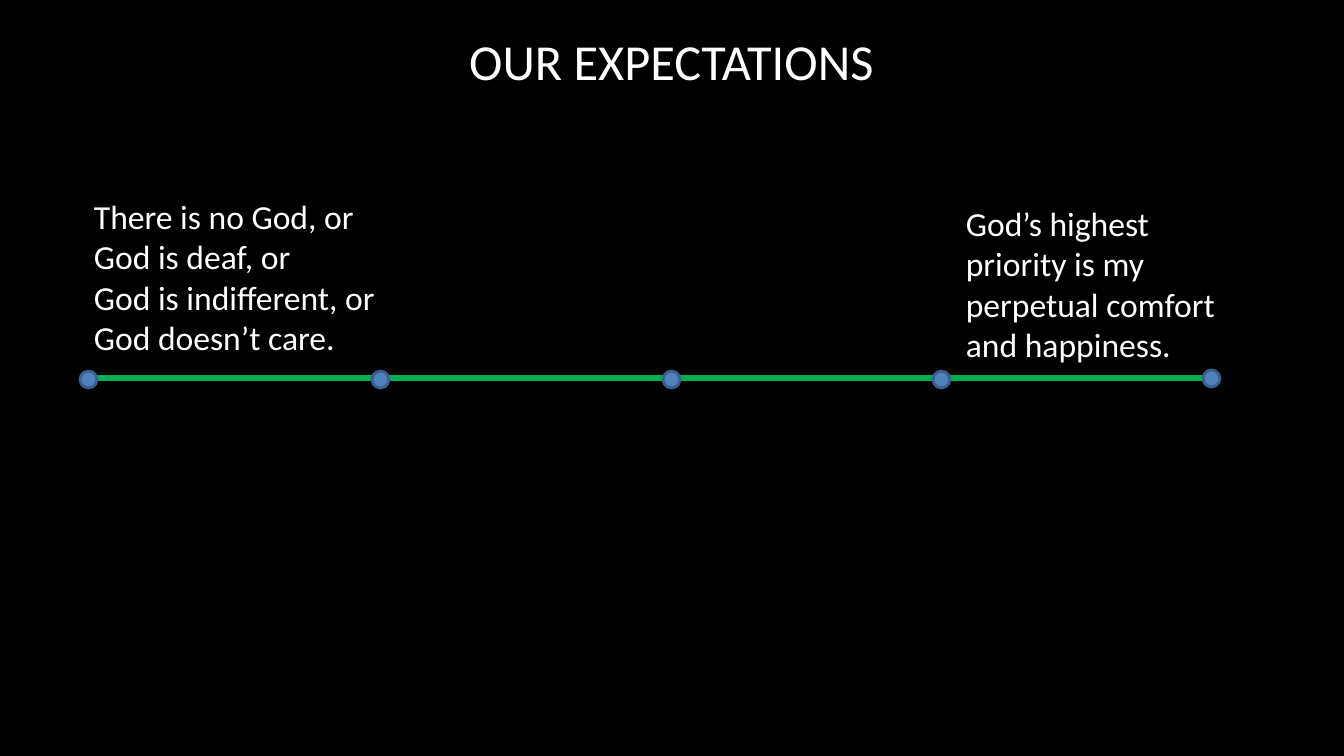
from dataclasses import dataclass

from lxml.etree import SubElement
from pptx import Presentation
from pptx.dml.color import RGBColor
from pptx.enum.shapes import MSO_CONNECTOR, MSO_SHAPE
from pptx.enum.text import MSO_AUTO_SIZE, PP_ALIGN
from pptx.oxml.ns import qn
from pptx.slide import Slide
from pptx.util import Emu, Pt

FONT = "Calibri"
BLACK, WHITE = "000000", "FFFFFF"
GREEN, BLUE, DARK_BLUE = "00B050", "4F81BD", "3A5F8C"
DOT_SIZE = 17


@dataclass
class TextBlock:
    left: int
    top: int
    width: int
    height: int
    lines: list[str]
    size: int = 24
    align: PP_ALIGN = PP_ALIGN.LEFT
    wrap: bool = True
    grow: bool = True


@dataclass
class Dot:
    left: int
    top: int = 371


TEXTS = [
    TextBlock(22, 25, 1299, 688, ["OUR EXPECTATIONS"], 36, PP_ALIGN.CENTER, grow=False),
    TextBlock(956, 198, 304, 173,
              ["God’s highest priority is my perpetual comfort and happiness."]),
    TextBlock(84, 191, 304, 173,
              ["There is no God, or", "God is deaf, or",
               "God is indifferent, or", "God doesn’t care."], wrap=False),
]
DOTS = [Dot(80), Dot(372), Dot(663), Dot(933), Dot(1203, 370)]


def px(n: int) -> Emu:
    return Emu(round(n * 914400 / 100.8))


def color(value: str) -> RGBColor:
    return RGBColor.from_string(value)


def add_text(slide: Slide, block: TextBlock) -> None:
    box = slide.shapes.add_textbox(px(block.left), px(block.top),
                                   px(block.width), px(block.height))
    tf = box.text_frame
    tf.word_wrap = block.wrap
    tf.auto_size = MSO_AUTO_SIZE.SHAPE_TO_FIT_TEXT if block.grow else MSO_AUTO_SIZE.NONE
    tf.text = "\n".join(block.lines)
    for p in tf.paragraphs:
        p.alignment = block.align
        p.font.name = FONT
        p.font.size = Pt(block.size)
        p.font.color.rgb = color(WHITE)


def add_scale_line(slide: Slide) -> None:
    line = slide.shapes.add_connector(MSO_CONNECTOR.STRAIGHT,
                                      px(88), px(378), px(1213), px(378))
    line.line.color.rgb = color(GREEN)
    line.line.width = Pt(5)
    SubElement(line._element.spPr, qn("a:effectLst"))


def add_dot(slide: Slide, dot: Dot) -> None:
    sp = slide.shapes.add_shape(MSO_SHAPE.OVAL, px(dot.left), px(dot.top),
                                px(DOT_SIZE), px(DOT_SIZE))
    sp.shadow.inherit = False
    sp.fill.solid()
    sp.fill.fore_color.rgb = color(BLUE)
    sp.line.color.rgb = color(DARK_BLUE)
    sp.line.width = Pt(2)


def main() -> None:
    prs = Presentation()
    prs.slide_width, prs.slide_height = px(1344), px(756)
    slide = prs.slides.add_slide(prs.slide_layouts[6])
    fill = slide.background.fill
    fill.solid()
    fill.fore_color.rgb = color(BLACK)

    title, *captions = TEXTS
    add_text(slide, title)
    add_scale_line(slide)
    for caption in captions:
        add_text(slide, caption)
    for dot in DOTS:
        add_dot(slide, dot)
    prs.save("out.pptx")


if __name__ == "__main__":
    main()
